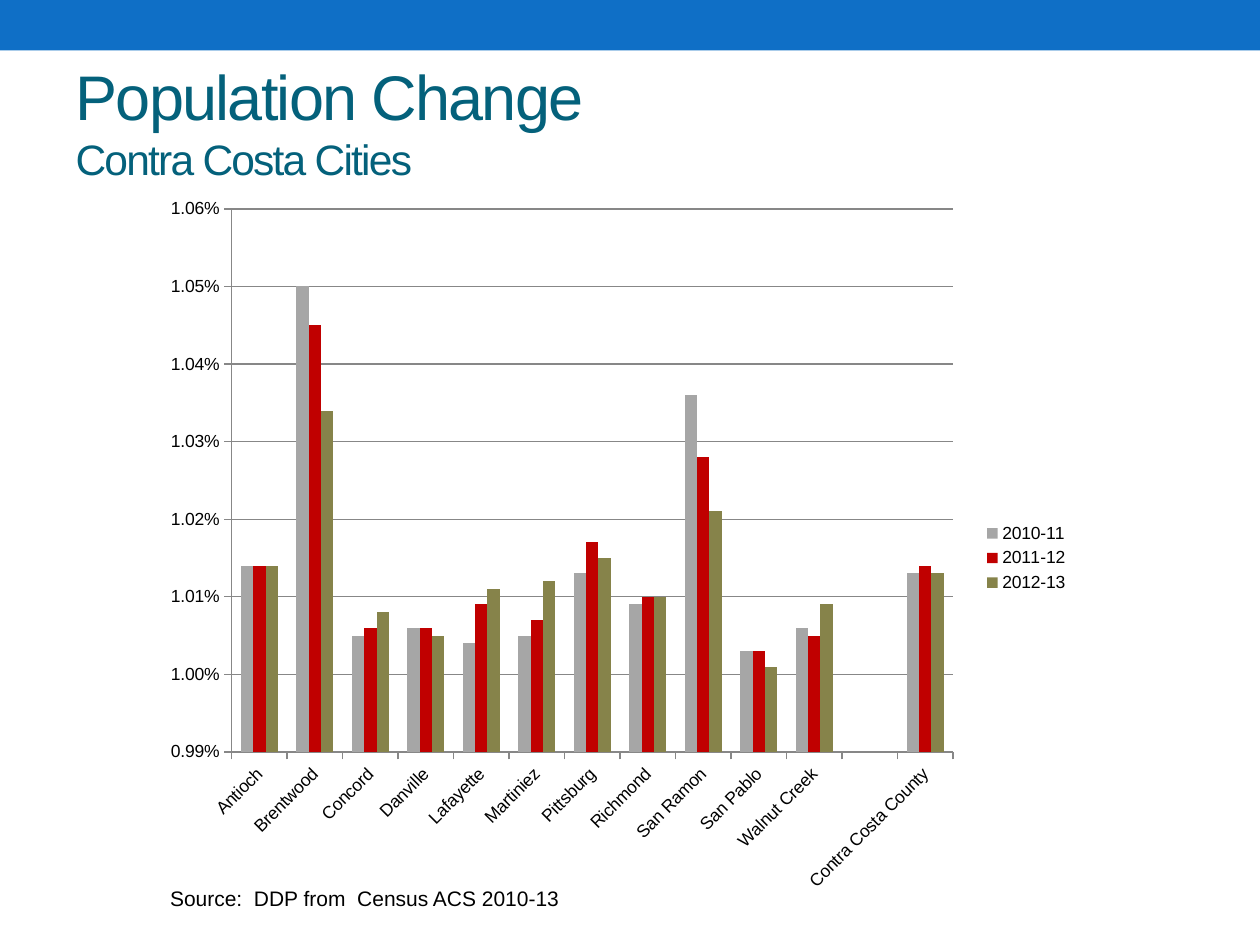
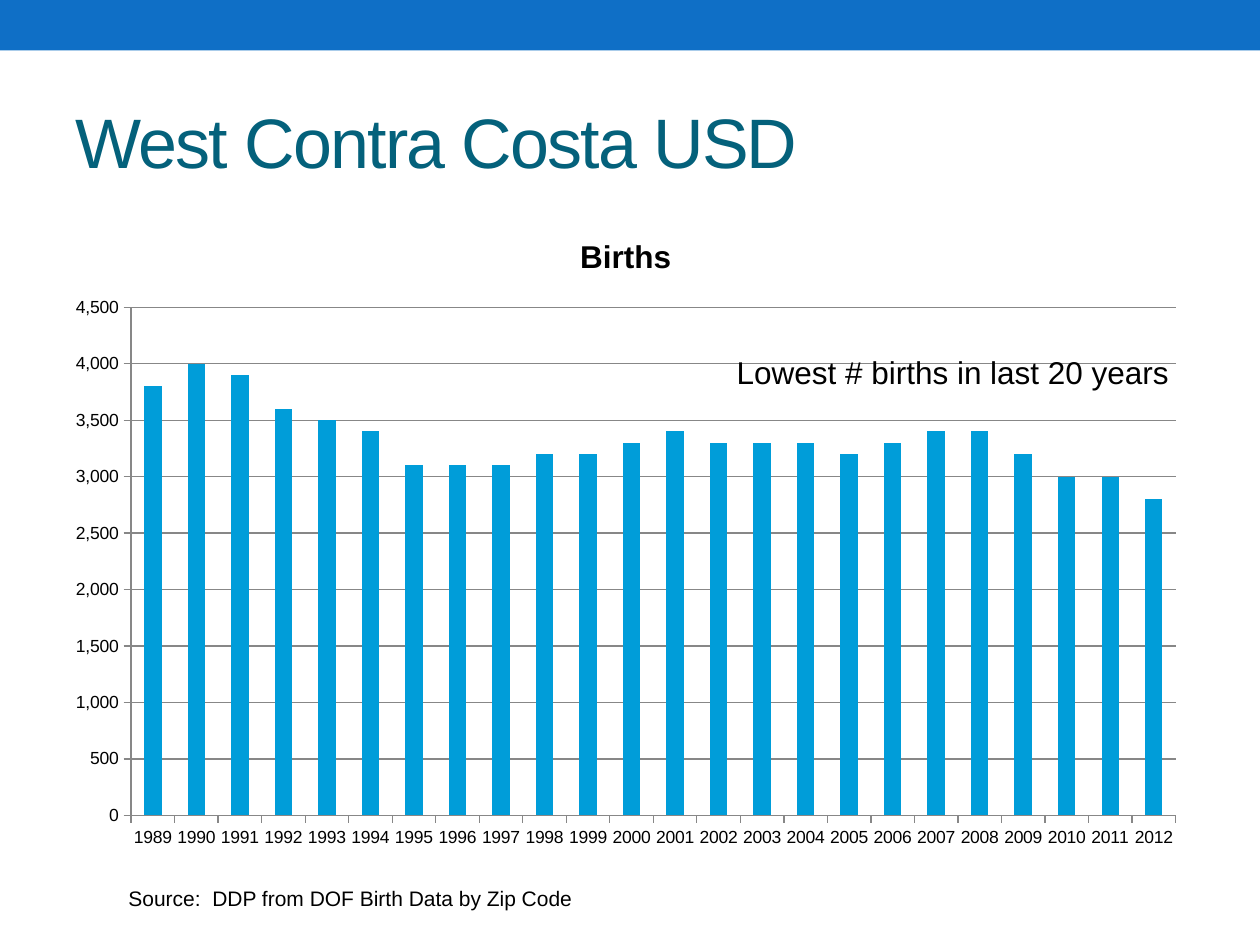
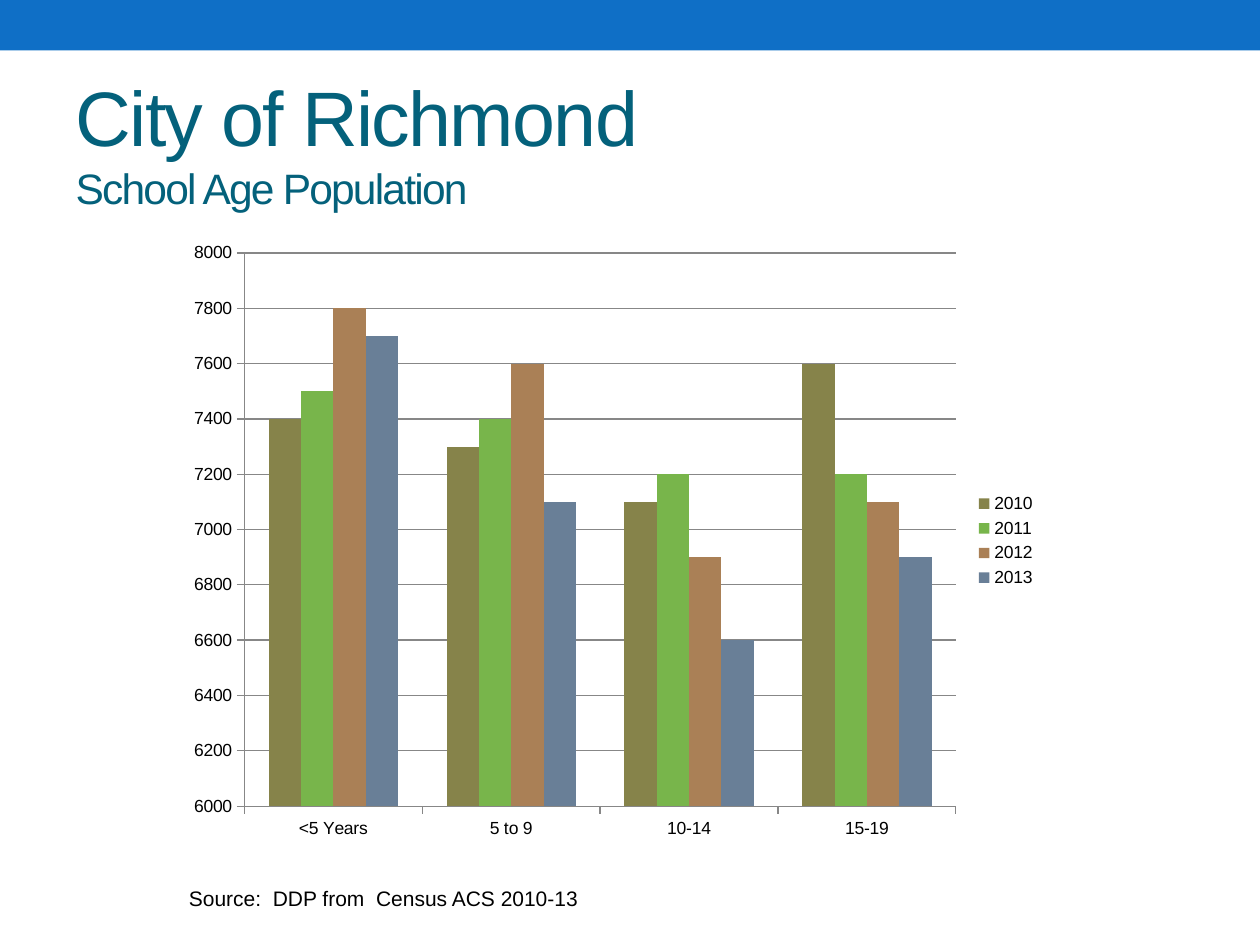
from lxml import etree
from pptx import Presentation
from pptx import util as u
from pptx.chart.data import CategoryChartData
from pptx.dml.color import RGBColor
from pptx.enum import chart as charts, shapes, text
from pptx.oxml import parse_xml
from pptx.oxml.ns import nsdecls, qn

COLOURS = {
    "band": "0F6FC6", "title": "04617B", "text": "000000", "grid": "878787",
    "grey": "A6A6A6", "red": "C00000", "olive": "86834A", "blue": "009DD9",
    "green": "78B54B", "brown": "AA8056", "slate": "697F97",
}
FONT = "Arial"
SOURCE_TOP = 17.73


def colour(name):
    return RGBColor.from_string(COLOURS[name])


class Report:
    """Holds the deck, its style and the current page; lengths are in cm."""

    def __init__(self):
        self.deck = Presentation()
        self.deck.slide_width, self.deck.slide_height = u.Cm(25.4), u.Cm(19.05)
        self.page = None

    def format_font(self, font, size, tint="text", bold=None):
        font.name, font.size, font.bold = FONT, u.Pt(size), bold
        font.color.rgb = colour(tint)

    def add_page(self, title, title_size, subtitle=None, title_top=1.47):
        self.page = self.deck.slides.add_slide(self.deck.slide_layouts[5])
        self.add_band()
        box = self.page.shapes.title
        box.left, box.top = u.Cm(1.27), u.Cm(title_top)
        box.width, box.height = u.Cm(22.86), u.Cm(2.74)
        frame = box.text_frame
        frame.text = f"{title}\v{subtitle}" if subtitle else title
        frame.word_wrap = True
        frame.auto_size = text.MSO_AUTO_SIZE.NONE
        frame.vertical_anchor = text.MSO_ANCHOR.MIDDLE
        para = frame.paragraphs[0]
        para.alignment = text.PP_ALIGN.LEFT
        for span, size in zip(para.runs, (title_size, 24.3)):
            self.format_font(span.font, size, "title")
            span.font._element.set("spc", "-100")

    def add_band(self):
        band = self.page.shapes.add_shape(
            shapes.MSO_SHAPE.RECTANGLE, 0, 0, self.deck.slide_width, u.Cm(1.02))
        band.shadow.inherit = False
        band.fill.solid()
        band.fill.fore_color.rgb = colour("band")
        band.line.fill.background()

    def add_text(self, words, left, top, width, height, size):
        box = self.page.shapes.add_textbox(*map(u.Cm, (left, top, width, height)))
        frame = box.text_frame
        frame.text = words
        frame.word_wrap = False
        frame.auto_size = text.MSO_AUTO_SIZE.SHAPE_TO_FIT_TEXT
        self.format_font(frame.paragraphs[0].runs[0].font, size)

    def add_source(self, words, left, width):
        self.add_text(words, left, SOURCE_TOP, width, 0.77, 12)

    def add_columns(self, area, categories, series, scale, number_format,
                    title=None, plot_area=None, label_angle=None):
        """Clustered columns; series maps a name to (colour, values)."""
        data = CategoryChartData(number_format=number_format)
        data.categories = categories
        for name, (_, values) in series.items():
            data.add_series(name, values)
        chart = self.page.shapes.add_chart(
            charts.XL_CHART_TYPE.COLUMN_CLUSTERED, *map(u.Cm, area), data).chart
        self.format_font(chart.font, 10)

        plot = chart.plots[0]
        plot.gap_width, plot.overlap, plot.vary_by_categories = 150, 0, False
        for column, (tint, _) in zip(plot.series, series.values()):
            column.format.fill.solid()
            column.format.fill.fore_color.rgb = colour(tint)

        self.format_axes(chart, scale, number_format, label_angle)
        chart.has_title = title is not None
        if title:
            frame = chart.chart_title.text_frame
            frame.text = title
            self.format_font(frame.paragraphs[0].runs[0].font, 18, bold=True)
        chart.has_legend = len(series) > 1
        if chart.has_legend:
            chart.legend.position = charts.XL_LEGEND_POSITION.RIGHT
            chart.legend.include_in_layout = False
        if plot_area:
            self.place_plot(chart, plot_area)

    def format_axes(self, chart, scale, number_format, label_angle):
        values, categories = chart.value_axis, chart.category_axis
        values.minimum_scale, values.maximum_scale, values.major_unit = scale
        values.has_major_gridlines = True
        values.tick_labels.number_format = number_format
        values.tick_labels.number_format_is_linked = False
        for axis in (values, categories):
            axis.major_tick_mark = charts.XL_TICK_MARK.OUTSIDE
            axis.minor_tick_mark = charts.XL_TICK_MARK.NONE
            self.format_font(axis.tick_labels.font, 10)
        for part in (values, categories, values.major_gridlines):
            part.format.line.color.rgb = colour("grid")
            part.format.line.width = u.Pt(0.75)
        if label_angle:
            body = categories._element.find(qn("c:txPr")).find(qn("a:bodyPr"))
            body.set("rot", str(label_angle * 60000))

    def place_plot(self, chart, plot_area):
        """Fix the inner plot area as fractions of the chart."""
        area = chart._chartSpace.chart.plotArea
        for old in area.findall(qn("c:layout")):
            area.remove(old)
        layout = parse_xml(f"<c:layout {nsdecls('c')}/>")
        manual = etree.SubElement(layout, qn("c:manualLayout"))
        settings = {"layoutTarget": "inner", "xMode": "edge", "yMode": "edge"}
        settings.update(zip("xywh", plot_area))
        for tag, value in settings.items():
            etree.SubElement(manual, qn(f"c:{tag}")).set("val", str(value))
        area.insert(0, layout)


def main():
    report = Report()

    # Population change by city
    report.add_page("Population Change", 36, "Contra Costa Cities", title_top=1.07)
    report.add_columns(
        (3.18, 4.01, 18.62, 14.48),
        ["Antioch", "Brentwood", "Concord", "Danville", "Lafayette", "Martiniez",
         "Pittsburg", "Richmond", "San Ramon", "San Pablo", "Walnut Creek", "",
         "Contra Costa County"],
        {"2010-11": ("grey", [0.01014, 0.0105, 0.01005, 0.01006, 0.01004, 0.01005,
                              0.01013, 0.01009, 0.01036, 0.01003, 0.01006, None,
                              0.01013]),
         "2011-12": ("red", [0.01014, 0.01045, 0.01006, 0.01006, 0.01009, 0.01007,
                             0.01017, 0.0101, 0.01028, 0.01003, 0.01005, None,
                             0.01014]),
         "2012-13": ("olive", [0.01014, 0.01034, 0.01008, 0.01005, 0.01011, 0.01012,
                               0.01015, 0.0101, 0.01021, 0.01001, 0.01009, None,
                               0.01013])},
        scale=(0.0099, 0.0106, 0.0001), number_format="0.00%",
        plot_area=(0.08, 0.014, 0.781, 0.756), label_angle=-45)
    report.add_source("Source:  DDP from  Census ACS 2010-13", 3.18, 8.43)

    # Births in the school district
    report.add_page("West Contra Costa USD", 40)
    report.add_columns(
        (1.07, 4.24, 23.09, 13.11),
        [str(year) for year in range(1989, 2013)],
        {"Births": ("blue", [3800, 4000, 3900, 3600, 3500, 3400, 3100, 3100,
                             3100, 3200, 3200, 3300, 3400, 3300, 3300, 3300,
                             3200, 3300, 3400, 3400, 3200, 3000, 3000, 2800])},
        scale=(0, 4500, 500), number_format="#,##0", title="Births")
    report.add_source("Source:  DDP from DOF Birth Data by Zip Code", 2.34, 9.55)
    report.add_text("Lowest # births in last 20 years", 14.6, 6.99, 9.32, 1.02, 18)

    # School age population
    report.add_page("City of Richmond", 44.1, "School Age Population")
    report.add_columns(
        (3.56, 4.65, 17.58, 12.5),
        ["<5 Years", "5 to 9", "10-14", "15-19"],
        {"2010": ("olive", [7400, 7300, 7100, 7600]),
         "2011": ("green", [7500, 7400, 7200, 7200]),
         "2012": ("brown", [7800, 7600, 6900, 7100]),
         "2013": ("slate", [7700, 7100, 6600, 6900])},
        scale=(6000, 8000, 200), number_format="General")
    report.add_source("Source:  DDP from  Census ACS 2010-13", 3.56, 8.43)

    report.deck.save("out.pptx")


if __name__ == "__main__":
    main()
